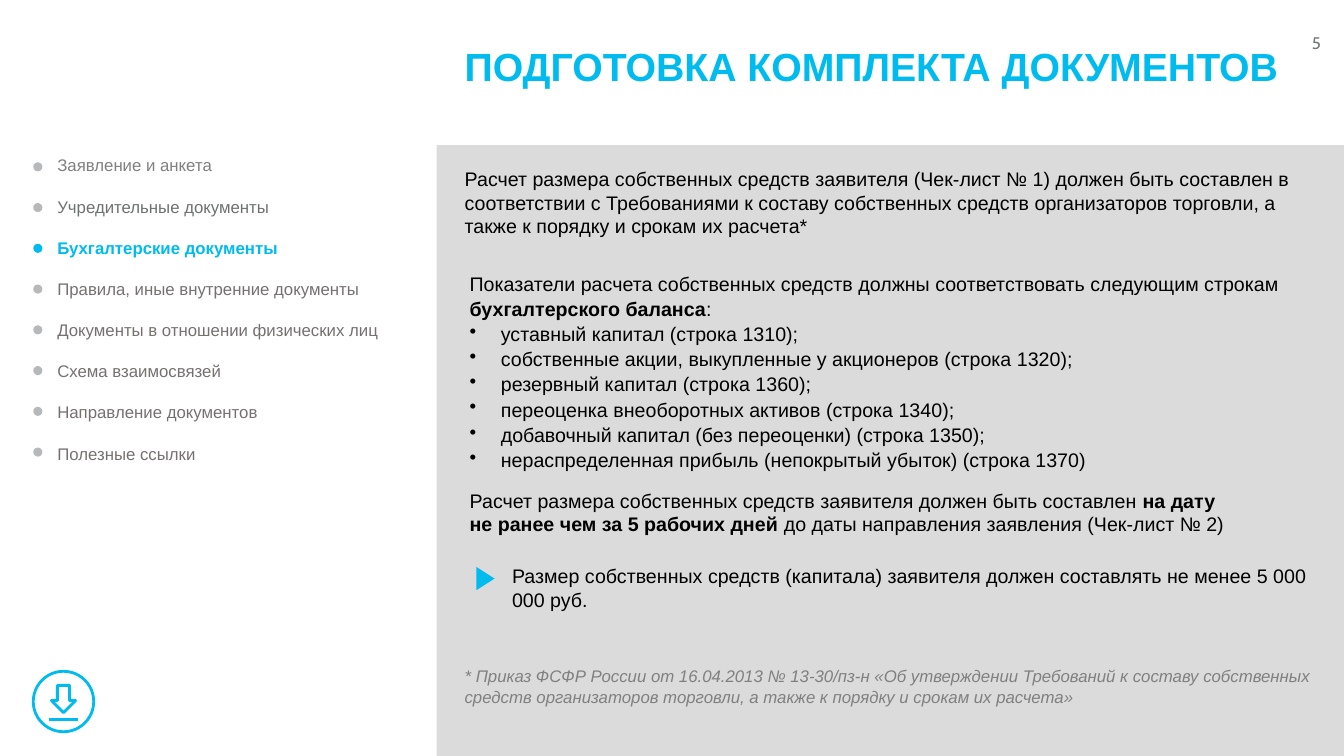
from lxml import etree
from pptx import Presentation
from pptx.dml.color import RGBColor
from pptx.enum.shapes import MSO_CONNECTOR, MSO_SHAPE
from pptx.enum.text import MSO_ANCHOR, PP_ALIGN
from pptx.oxml.ns import qn
from pptx.util import Inches, Pt

CYAN = RGBColor(0x00, 0xBB, 0xEE)
PANEL_GRAY = RGBColor(0xDB, 0xDB, 0xDC)
DOT_GRAY = RGBColor(0xB7, 0xB8, 0xB9)
NUMBER_GRAY = RGBColor(0x74, 0x77, 0x7B)
NOTE_GRAY = RGBColor(0x80, 0x80, 0x80)
MENU_GRAY = RGBColor(0x76, 0x71, 0x71)
MENU_DARK = RGBColor(0x6F, 0x71, 0x71)
BLACK = RGBColor(0x00, 0x00, 0x00)

MENU = [
    ("Заявление и анкета", NOTE_GRAY),
    ("Учредительные документы", MENU_DARK),
    ("Бухгалтерские документы", CYAN),
    ("Правила, иные внутренние документы", MENU_GRAY),
    ("Документы в отношении физических лиц", MENU_GRAY),
    ("Схема взаимосвязей", MENU_GRAY),
    ("Направление документов", MENU_GRAY),
    ("Полезные ссылки", MENU_GRAY),
]
BALANCE_LINES = [
    "уставный капитал (строка 1310);",
    "собственные акции, выкупленные у акционеров (строка 1320);",
    "резервный капитал (строка 1360);",
    "переоценка внеоборотных активов (строка 1340);",
    "добавочный капитал (без переоценки) (строка 1350);",
    "нераспределенная прибыль (непокрытый убыток) (строка 1370)",
]


def style(paragraph, size, color, bold=False, italic=False, name="Arial"):
    font = paragraph.font
    font.name, font.size, font.bold, font.italic = name, Pt(size), bold, italic
    font.color.rgb = color


def add_text_frame(slide, left, top, width, height):
    box = slide.shapes.add_textbox(Inches(left), Inches(top), Inches(width), Inches(height))
    box.text_frame.word_wrap = True
    return box.text_frame


def next_paragraph(frame):
    """Return the empty first paragraph, or a new one once it is filled."""
    first = frame.paragraphs[0]
    return frame.add_paragraph() if first.runs else first


def add_paragraph(frame, *parts, size=14, color=BLACK, **look):
    """Write parts in turn; every second part is bold, a newline is a line break."""
    paragraph = next_paragraph(frame)
    for index, part in enumerate(parts):
        for number, line in enumerate(part.split("\n")):
            if number:
                paragraph.add_line_break()
            run = paragraph.add_run()
            run.text = line
            if index % 2:
                run.font.bold = True
    style(paragraph, size, color, **look)
    return paragraph


def add_bullet(paragraph):
    properties = paragraph._p.get_or_add_pPr()
    properties.set("marL", str(Inches(0.31)))
    properties.set("indent", str(Inches(-0.31)))
    bullet = etree.Element(qn("a:buChar"), char="•")
    properties.insert_element_before(bullet, "a:tabLst", "a:defRPr", "a:extLst")


def add_shape(slide, kind, left, top, width, height, fill=None, line=None):
    shape = slide.shapes.add_shape(kind, Inches(left), Inches(top), Inches(width), Inches(height))
    shape.shadow.inherit = False
    if fill is None:
        shape.fill.background()
    else:
        shape.fill.solid()
        shape.fill.fore_color.rgb = fill
    if line is None:
        shape.line.fill.background()
    else:
        shape.line.color.rgb = line
        shape.line.width = Pt(2)
    return shape


def add_menu(slide):
    frame = add_text_frame(slide, 0.47, 1.49, 3.69, 3.19)
    first_dot, last_dot = 1.61, 4.44
    pitch = (last_dot - first_dot) / (len(MENU) - 1)
    for index, (label, color) in enumerate(MENU):
        current = color == CYAN
        entry = add_paragraph(frame, label, size=12, color=color, bold=current)
        entry.space_after = Pt(15)
        add_shape(slide, MSO_SHAPE.OVAL, 0.33, first_dot + index * pitch, 0.09, 0.09,
                  fill=CYAN if current else DOT_GRAY)


def add_download_icon(slide):
    add_shape(slide, MSO_SHAPE.OVAL, 0.33, 6.66, 0.6, 0.6, line=CYAN)
    add_shape(slide, MSO_SHAPE.DOWN_ARROW, 0.51, 6.8, 0.24, 0.27, line=CYAN)
    tray = slide.shapes.add_connector(
        MSO_CONNECTOR.STRAIGHT, Inches(0.49), Inches(7.14), Inches(0.77), Inches(7.14))
    tray.line.color.rgb = CYAN
    tray.line.width = Pt(2)
    etree.SubElement(tray._element.spPr, qn("a:effectLst"))


def add_balance_list(slide):
    frame = add_text_frame(slide, 4.56, 2.63, 8.77, 2.12)
    add_paragraph(
        frame,
        "Показатели расчета собственных средств должны соответствовать следующим строкам ",
        "бухгалтерского баланса", ":")
    for line in BALANCE_LINES:
        add_bullet(add_paragraph(frame, line))
    for paragraph in frame.paragraphs:
        paragraph.line_spacing = 1.07


def add_requirements(slide):
    add_shape(slide, MSO_SHAPE.RECTANGLE, 4.33, 1.44, 9, 6.06, fill=PANEL_GRAY)
    add_paragraph(
        add_text_frame(slide, 4.51, 1.61, 8.82, 0.81),
        "Расчет размера собственных средств заявителя (Чек-лист № 1) должен быть составлен "
        "в соответствии с Требованиями к составу собственных средств организаторов торговли, "
        "а также к порядку и срокам их расчета*")
    add_balance_list(slide)
    add_paragraph(
        add_text_frame(slide, 4.56, 4.8, 8.77, 0.57),
        "Расчет размера собственных средств заявителя должен быть составлен ",
        "на дату\nне ранее чем за 5 рабочих дней ",
        "до даты направления заявления (Чек-лист № 2)")
    marker = add_shape(slide, MSO_SHAPE.ISOSCELES_TRIANGLE, 4.7, 5.65, 0.23, 0.18, fill=CYAN)
    marker.rotation = 90
    add_paragraph(
        add_text_frame(slide, 4.98, 5.55, 8.35, 0.57),
        "Размер собственных средств (капитала) заявителя должен составлять "
        "не менее 5 000 000 руб.")
    add_paragraph(
        add_text_frame(slide, 4.51, 6.56, 8.82, 0.5),
        "* Приказ ФСФР России от 16.04.2013 № 13-30/пз-н «Об утверждении Требований к составу "
        "собственных средств организаторов торговли, а также к порядку и срокам их расчета»",
        size=12, color=NOTE_GRAY, italic=True)


def add_header(slide):
    number = add_paragraph(add_text_frame(slide, 10.78, 0.28, 2.42, 0.3), "5",
                           size=12, color=NUMBER_GRAY, name="Cabin")
    number.alignment = PP_ALIGN.RIGHT
    frame = add_text_frame(slide, 4.51, 0.18, 8.82, 1.01)
    frame.vertical_anchor = MSO_ANCHOR.MIDDLE
    title = add_paragraph(frame, "ПОДГОТОВКА КОМПЛЕКТА ДОКУМЕНТОВ",
                          size=28, color=CYAN, bold=True)
    title.line_spacing = 0.9


def main():
    presentation = Presentation()
    presentation.slide_width = Inches(13.33)
    presentation.slide_height = Inches(7.5)
    slide = presentation.slides.add_slide(presentation.slide_layouts[6])
    add_header(slide)
    add_requirements(slide)
    add_download_icon(slide)
    add_menu(slide)
    presentation.save("out.pptx")


if __name__ == "__main__":
    main()
